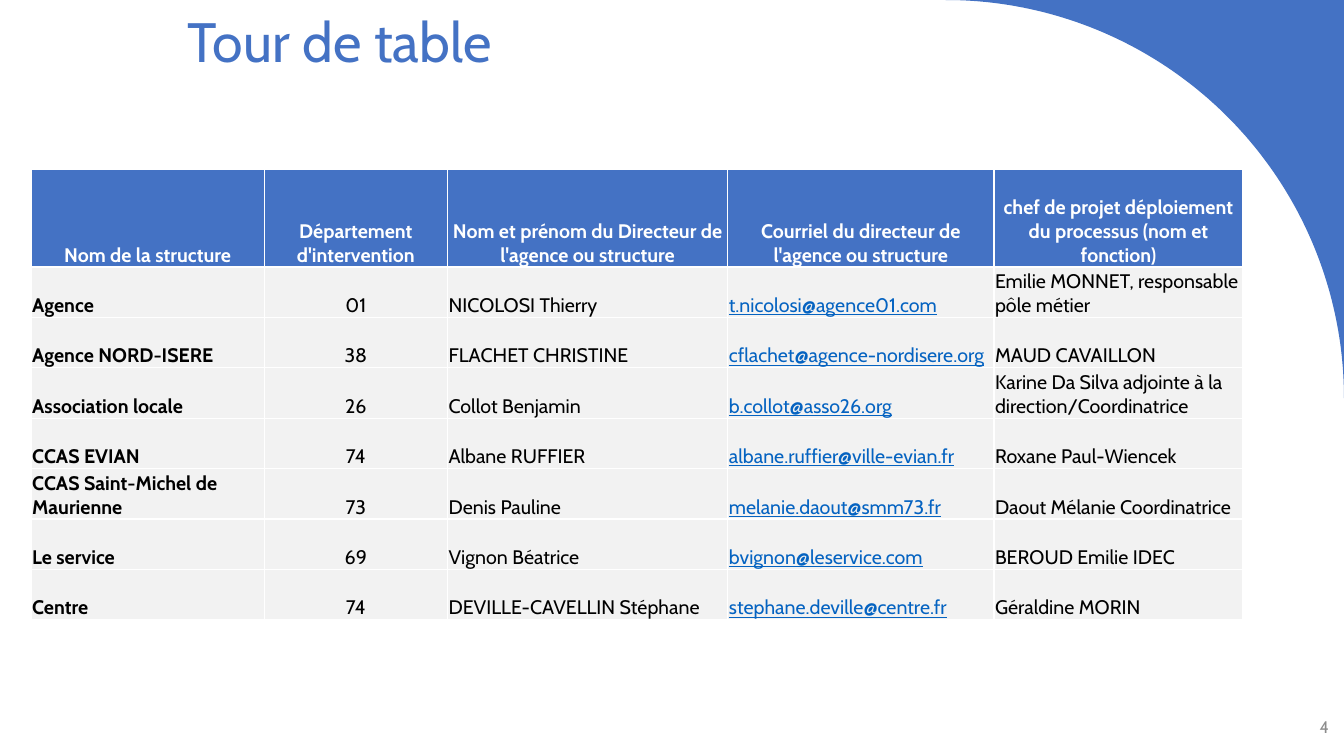
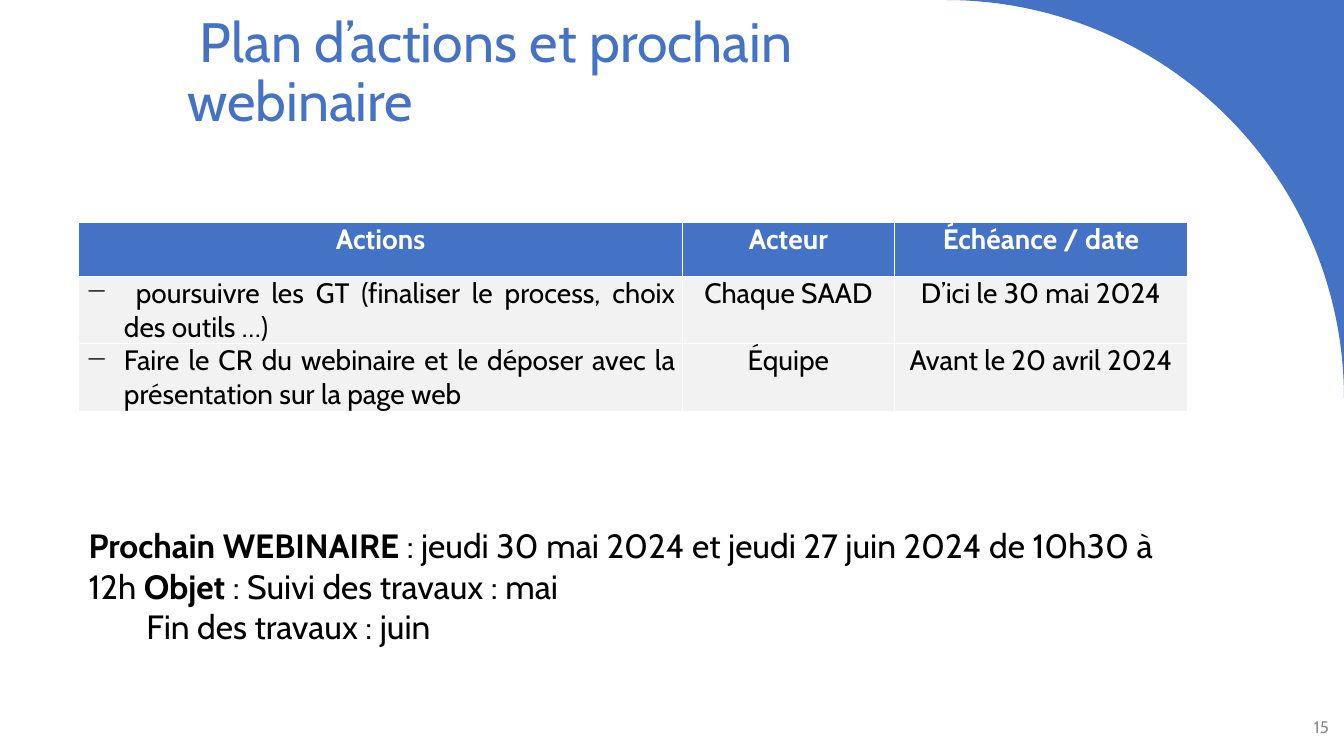
import math
from dataclasses import dataclass

from lxml import etree
from pptx import Presentation, util as u
from pptx.dml.color import RGBColor
from pptx.enum import shapes, text
from pptx.oxml import parse_xml
from pptx.oxml.ns import nsdecls, qn

Inches = u.Inches
LEFT, CENTER = text.PP_ALIGN.LEFT, text.PP_ALIGN.CENTER
RIGHT, JUSTIFY = text.PP_ALIGN.RIGHT, text.PP_ALIGN.JUSTIFY
TOP, MIDDLE, BOTTOM = (text.MSO_ANCHOR.TOP, text.MSO_ANCHOR.MIDDLE,
                       text.MSO_ANCHOR.BOTTOM)


@dataclass(frozen=True)
class Theme:
    font: str = "Cabin"
    blue: str = "4472C4"
    row: str = "F2F2F2"
    white: str = "FFFFFF"
    ink: str = "000000"
    link: str = "0563C1"
    grey: str = "8C8C8C"
    title_size: float = 39.6
    contact_size: float = 14
    action_size: float = 20
    note_size: float = 24
    number_size: float = 12


THEME = Theme()
WIDTH, HEIGHT = 13.33, 7.5
CORNER_RADIUS = 3.95

# Content
CONTACTS = [
    ("Nom de la structure", "Département d'intervention",
     "Nom et prénom du Directeur de l'agence ou structure",
     "Courriel du directeur de l'agence ou structure",
     "chef de projet déploiement du processus (nom et fonction)"),
    ("Agence", "01", "NICOLOSI Thierry", "t.nicolosi@agence01.com",
     "Emilie MONNET, responsable pôle métier"),
    ("Agence NORD-ISERE", "38", "FLACHET CHRISTINE",
     "cflachet@agence-nordisere.org", "MAUD CAVAILLON"),
    ("Association locale", "26", "Collot Benjamin", "b.collot@asso26.org",
     "Karine Da Silva adjointe à la direction/Coordinatrice"),
    ("CCAS EVIAN", "74", "Albane RUFFIER", "albane.ruffier@ville-evian.fr",
     "Roxane Paul-Wiencek"),
    ("CCAS Saint-Michel de Maurienne", "73", "Denis Pauline",
     "melanie.daout@smm73.fr", "Daout Mélanie Coordinatrice"),
    ("Le service", "69", "Vignon Béatrice", "bvignon@leservice.com",
     "BEROUD Emilie IDEC"),
    ("Centre", "74", "DEVILLE-CAVELLIN Stéphane", "stephane.deville@centre.fr",
     "Géraldine MORIN"),
]
ACTIONS = [
    ("Actions", "Acteur", "Échéance / date"),
    (" poursuivre les GT (finaliser le process, choix des outils …)",
     "Chaque SAAD", "D’ici le 30 mai 2024"),
    ("Faire le CR du webinaire et le déposer avec la présentation sur la page web",
     "Équipe", "Avant le 20 avril 2024"),
]
# Paragraphs of (text, bold) runs
NEXT_WEBINAR = [
    [("Prochain WEBINAIRE ", True),
     (": jeudi 30 mai 2024 et jeudi 27 juin 2024 de 10h30 à 12h ", False),
     ("Objet", True), (" : Suivi des travaux : mai", False)],
    [("\t Fin des travaux : juin", False)],
]

# Look of each table: one entry per column
CONTACT_STYLE = dict(
    size=THEME.contact_size, anchor=BOTTOM, margins=(0.01, 0.01, 0.01, 0),
    columns=[dict(width=2.31, bold=True), dict(width=1.82, align=CENTER),
             dict(width=2.78), dict(width=2.64, link=True), dict(width=2.47)])
ACTION_STYLE = dict(
    size=THEME.action_size, anchor=TOP, margins=(0.07, 0, 0.07, 0),
    columns=[dict(width=5.99, align=JUSTIFY, bullet="−"),
             dict(width=2.1, align=CENTER), dict(width=2.91, align=CENTER)])


# Text and shape helpers
def add_run(paragraph, words, size, color=THEME.ink, bold=False, underline=False):
    run = paragraph.add_run()
    run.text = words
    font = run.font
    font.name, font.size = THEME.font, u.Pt(size)
    font.bold, font.underline = bold, underline
    font.color.rgb = RGBColor.from_string(color)


def paint(target, color):
    target.fill.solid()
    target.fill.fore_color.rgb = RGBColor.from_string(color)


def flatten(shape, color):
    paint(shape, color)
    shape.line.fill.background()
    shape.shadow.inherit = False


def add_bullet(paragraph, symbol, indent=0.38):
    properties = paragraph._p.get_or_add_pPr()
    properties.set("marL", str(Inches(indent)))
    properties.set("indent", str(-Inches(indent)))
    etree.SubElement(properties, qn("a:buChar")).set("char", symbol)


def add_borders(cell):
    properties = cell._tc.get_or_add_tcPr()
    for position, side in enumerate(("lnL", "lnR", "lnT", "lnB")):
        properties.insert(position, parse_xml(
            f'<a:{side} {nsdecls("a")} w="{u.Pt(1)}"><a:solidFill>'
            f'<a:srgbClr val="{THEME.white}"/></a:solidFill></a:{side}>'))


# Shared parts
def add_corner(layout, slide):
    """Draw the blue corner, then move it behind everything on the layout."""
    steps = 120
    center_x = WIDTH - CORNER_RADIUS
    angles = [math.pi / 2 * step / steps for step in range(steps + 1)]
    arc = [(Inches(center_x + CORNER_RADIUS * math.sin(angle)),
            Inches(CORNER_RADIUS * (1 - math.cos(angle)))) for angle in angles]
    builder = slide.shapes.build_freeform(Inches(WIDTH), 0)
    builder.add_line_segments(arc, close=True)
    corner = builder.convert_to_shape()
    flatten(corner, THEME.blue)
    layout.placeholders[0].element.getparent().insert(2, corner.element)


def add_slide(presentation, layout, title, title_top, number):
    slide = presentation.slides.add_slide(layout)
    heading = slide.shapes.title
    heading.left, heading.top = Inches(1.76), Inches(title_top)
    heading.width, heading.height = Inches(7.23), Inches(0.49)
    frame = heading.text_frame
    frame.vertical_anchor, frame.word_wrap = MIDDLE, True
    frame.auto_size = text.MSO_AUTO_SIZE.NONE
    paragraph = frame.paragraphs[0]
    paragraph.alignment, paragraph.line_spacing = LEFT, 0.9
    paragraph.space_before = u.Pt(0)
    add_run(paragraph, title, THEME.title_size, THEME.blue)

    box = slide.shapes.add_textbox(Inches(12.58), Inches(7.01), Inches(0.7), Inches(0.4))
    box.text_frame.word_wrap = True
    box.text_frame.vertical_anchor = MIDDLE
    paragraph = box.text_frame.paragraphs[0]
    paragraph.alignment = RIGHT
    add_run(paragraph, str(number), THEME.number_size, THEME.grey)
    return slide


def fill_cell(cell, words, style, column, is_header):
    paint(cell, THEME.blue if is_header else THEME.row)
    add_borders(cell)
    (cell.margin_left, cell.margin_top,
     cell.margin_right, cell.margin_bottom) = map(Inches, style["margins"])
    cell.vertical_anchor = style["anchor"]
    paragraph = cell.text_frame.paragraphs[0]
    if is_header:
        paragraph.alignment = CENTER
        add_run(paragraph, words, style["size"], THEME.white, bold=True)
        return
    paragraph.alignment = column.get("align", LEFT)
    if "bullet" in column:
        add_bullet(paragraph, column["bullet"])
    is_link = column.get("link", False)
    add_run(paragraph, words, style["size"], THEME.link if is_link else THEME.ink,
            column.get("bold", False), is_link)


def add_grid(slide, rows, style, left, top, heights):
    columns = style["columns"]
    width = sum(column["width"] for column in columns)
    table = slide.shapes.add_table(
        len(rows), len(columns), Inches(left), Inches(top),
        Inches(width), Inches(sum(heights))).table
    table.horz_banding = False
    for table_column, column in zip(table.columns, columns):
        table_column.width = Inches(column["width"])
    for row_index, (row, height) in enumerate(zip(rows, heights)):
        table.rows[row_index].height = Inches(height)
        for column_index, (words, column) in enumerate(zip(row, columns)):
            fill_cell(table.cell(row_index, column_index), words, style,
                      column, row_index == 0)


def add_note(slide, paragraphs):
    note = slide.shapes.add_shape(shapes.MSO_SHAPE.RECTANGLE, Inches(0.78),
                                  Inches(5.16), Inches(11.1), Inches(1.31))
    flatten(note, THEME.white)
    frame = note.text_frame
    frame.word_wrap, frame.vertical_anchor = True, TOP
    frame.auto_size = text.MSO_AUTO_SIZE.SHAPE_TO_FIT_TEXT
    for index, runs in enumerate(paragraphs):
        paragraph = frame.add_paragraph() if index else frame.paragraphs[0]
        paragraph.alignment = LEFT
        for words, bold in runs:
            add_run(paragraph, words, THEME.note_size, bold=bold)


def main():
    presentation = Presentation()
    presentation.slide_width, presentation.slide_height = Inches(WIDTH), Inches(HEIGHT)
    layout = presentation.slide_layouts[5]

    # Round-table slide
    slide = add_slide(presentation, layout, "Tour de table", 0.2, 4)
    add_corner(layout, slide)
    add_grid(slide, CONTACTS, CONTACT_STYLE, 0.31, 1.68,
             [0.97] + [0.5] * (len(CONTACTS) - 1))

    # Action-plan slide
    slide = add_slide(presentation, layout,
                      " Plan d’actions et prochain webinaire", 0.49, 15)
    add_grid(slide, ACTIONS, ACTION_STYLE, 0.78, 2.21,
             [0.53] + [0.67] * (len(ACTIONS) - 1))
    add_note(slide, NEXT_WEBINAR)

    presentation.save("out.pptx")


if __name__ == "__main__":
    main()
